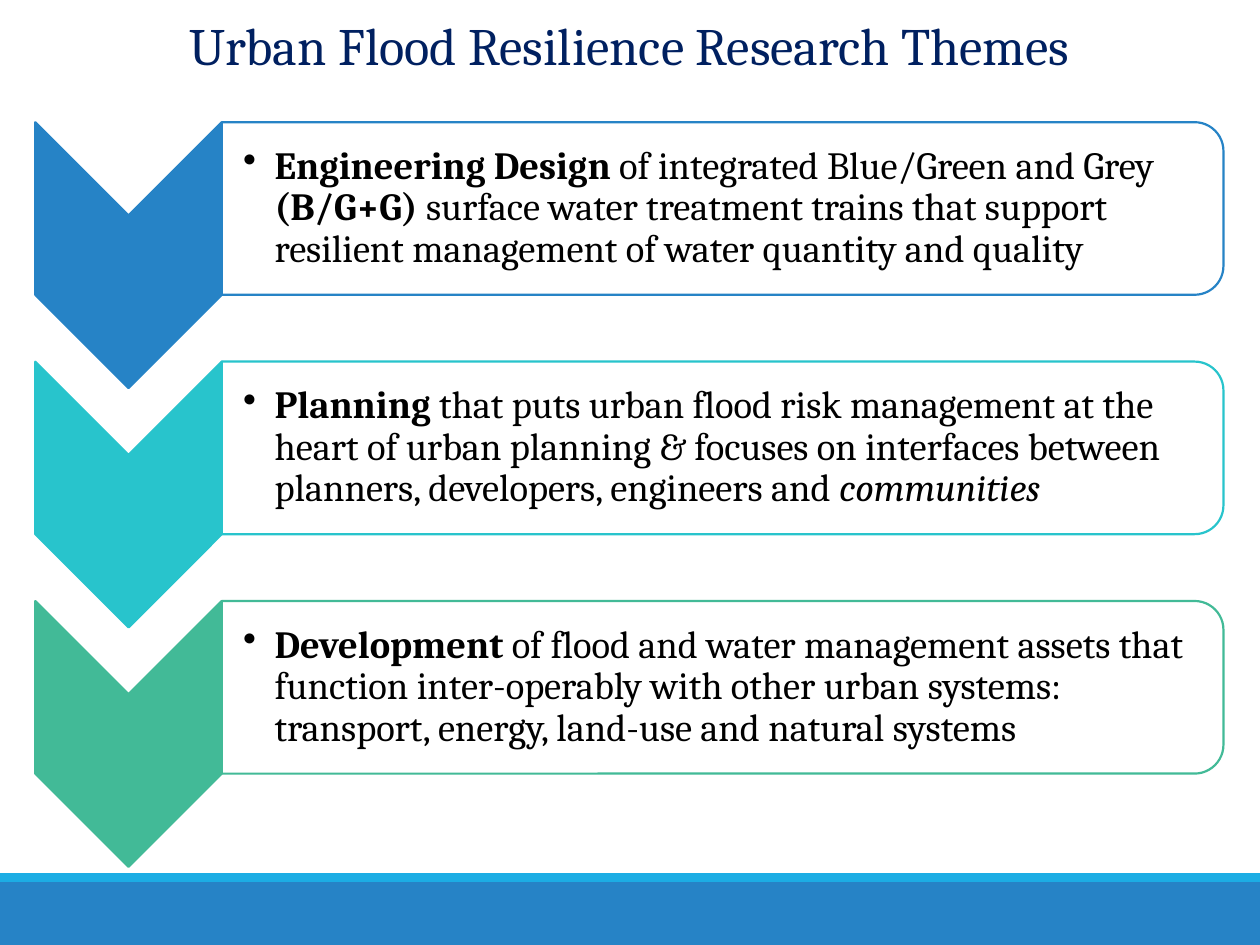
from dataclasses import dataclass

from lxml import etree
from pptx import Presentation
from pptx.dml.color import RGBColor
from pptx.enum.shapes import MSO_SHAPE as SHAPE
from pptx.enum.text import MSO_ANCHOR as ANCHOR, MSO_AUTO_SIZE as AUTO, PP_ALIGN as ALIGN
from pptx.oxml.ns import qn
from pptx.util import Inches, Pt


@dataclass(frozen=True)
class Theme:
    font: str = "Cambria"
    title_size: int = 30
    body_size: int = 22
    line_width: float = 1.25
    title: str = "002060"
    text: str = "000000"
    panel: str = "FFFFFF"
    panel_alpha: int = 90
    blue: str = "2683C6"
    sky: str = "1CADE4"
    teal: str = "28C4CC"
    green: str = "42BA97"


THEME = Theme()

# Each theme: colour, then runs of (text, bold, italic)
THEMES = [
    (THEME.blue, [
        ("Engineering Design ", True, False),
        ("of integrated Blue/Green and Grey ", False, False),
        ("(B/G+G)", True, False),
        (" surface water treatment trains that support resilient management "
         "of water quantity and quality", False, False),
    ]),
    (THEME.teal, [
        ("Planning", True, False),
        (" that puts urban flood risk management at the heart of urban planning "
         "& focuses on interfaces between planners, developers, engineers and ", False, False),
        ("communities", False, True),
    ]),
    (THEME.green, [
        ("Development", True, False),
        (" of flood and water management assets that function inter-operably with "
         "other urban systems: transport, energy, land-use and natural systems", False, False),
    ]),
]


def add_run(p, text, size, color, bold=False, italic=False):
    r = p.add_run()
    r.text = text
    r.font.name = THEME.font
    r.font.size = Pt(size)
    r.font.bold = bold
    r.font.italic = italic
    r.font.color.rgb = RGBColor.from_string(color)


def add_filled(slide, kind, box, fill, line=None):
    sp = slide.shapes.add_shape(kind, *map(Inches, box))
    sp.shadow.inherit = False
    sp.fill.solid()
    sp.fill.fore_color.rgb = RGBColor.from_string(fill)
    if line:
        sp.line.color.rgb = RGBColor.from_string(line)
        sp.line.width = Pt(THEME.line_width)
    else:
        sp.line.fill.background()
    return sp


def add_turned(slide, kind, box, fill, line):
    """Fill the visible box with a shape turned a quarter clockwise."""
    x, y, w, h = box
    sp = add_filled(slide, kind, (x + (w - h) / 2, y + (h - w) / 2, h, w), fill, line)
    sp.rotation = 90
    return sp


def set_bullet(p, indent):
    pPr = p._p.get_or_add_pPr()
    pPr.set("marL", str(Inches(indent)))
    pPr.set("indent", str(-Inches(indent)))
    etree.SubElement(pPr, qn("a:buChar"), char="•")


def add_title(slide, box, text):
    sp = slide.shapes.title
    sp.left, sp.top, sp.width, sp.height = map(Inches, box)
    tf = sp.text_frame
    tf.auto_size = AUTO.NONE
    tf.vertical_anchor = ANCHOR.MIDDLE
    p = tf.paragraphs[0]
    p.alignment = ALIGN.CENTER
    add_run(p, text, THEME.title_size, THEME.title)


def add_footer(slide, box):
    x, y, w, h = box
    stripe = 0.07
    add_filled(slide, SHAPE.RECTANGLE, (x, y + stripe, w, h - stripe), THEME.blue)
    add_filled(slide, SHAPE.RECTANGLE, (x, y, w, stripe), THEME.sky)


def add_theme_row(slide, box, color, runs):
    x, y, w, h = box
    arrow_w, panel_h, inset = 1.48, 1.37, 0.07
    panel_x, panel_w = x + arrow_w, w - arrow_w

    # Downward arrow and panel rounded on its right side
    add_turned(slide, SHAPE.CHEVRON, (x, y, arrow_w, h), color, color)
    panel = add_turned(slide, SHAPE.ROUND_2_SAME_RECTANGLE,
                       (panel_x, y, panel_w, panel_h), THEME.panel, color)
    fill = panel.fill._xPr.find(qn("a:solidFill"))[0]
    etree.SubElement(fill, qn("a:alpha"), val=str(THEME.panel_alpha * 1000))

    # Upright text over the panel
    text_box = (panel_x, y + inset, panel_w - inset, panel_h - 2 * inset)
    tf = slide.shapes.add_textbox(*map(Inches, text_box)).text_frame
    tf.word_wrap = True
    tf.vertical_anchor = ANCHOR.MIDDLE
    tf.margin_left = Inches(0.17)
    tf.margin_top = tf.margin_right = tf.margin_bottom = Inches(0.02)
    p = tf.paragraphs[0]
    p.level = 1
    p.line_spacing = 0.9
    set_bullet(p, 0.25)
    for text, bold, italic in runs:
        add_run(p, text, THEME.body_size, THEME.text, bold, italic)


def main():
    prs = Presentation()
    prs.slide_width, prs.slide_height = Inches(10), Inches(7.5)
    slide = prs.slides.add_slide(prs.slide_layouts[5])

    add_footer(slide, (0, 6.93, 10, 0.57))
    top, pitch = 0.97, 1.9
    for i, (color, runs) in enumerate(THEMES):
        add_theme_row(slide, (0.28, top + i * pitch, 9.43, 2.11), color, runs)
    add_title(slide, (0.01, 0.05, 9.97, 0.61), "Urban Flood Resilience Research Themes")

    prs.save("out.pptx")


if __name__ == "__main__":
    main()
